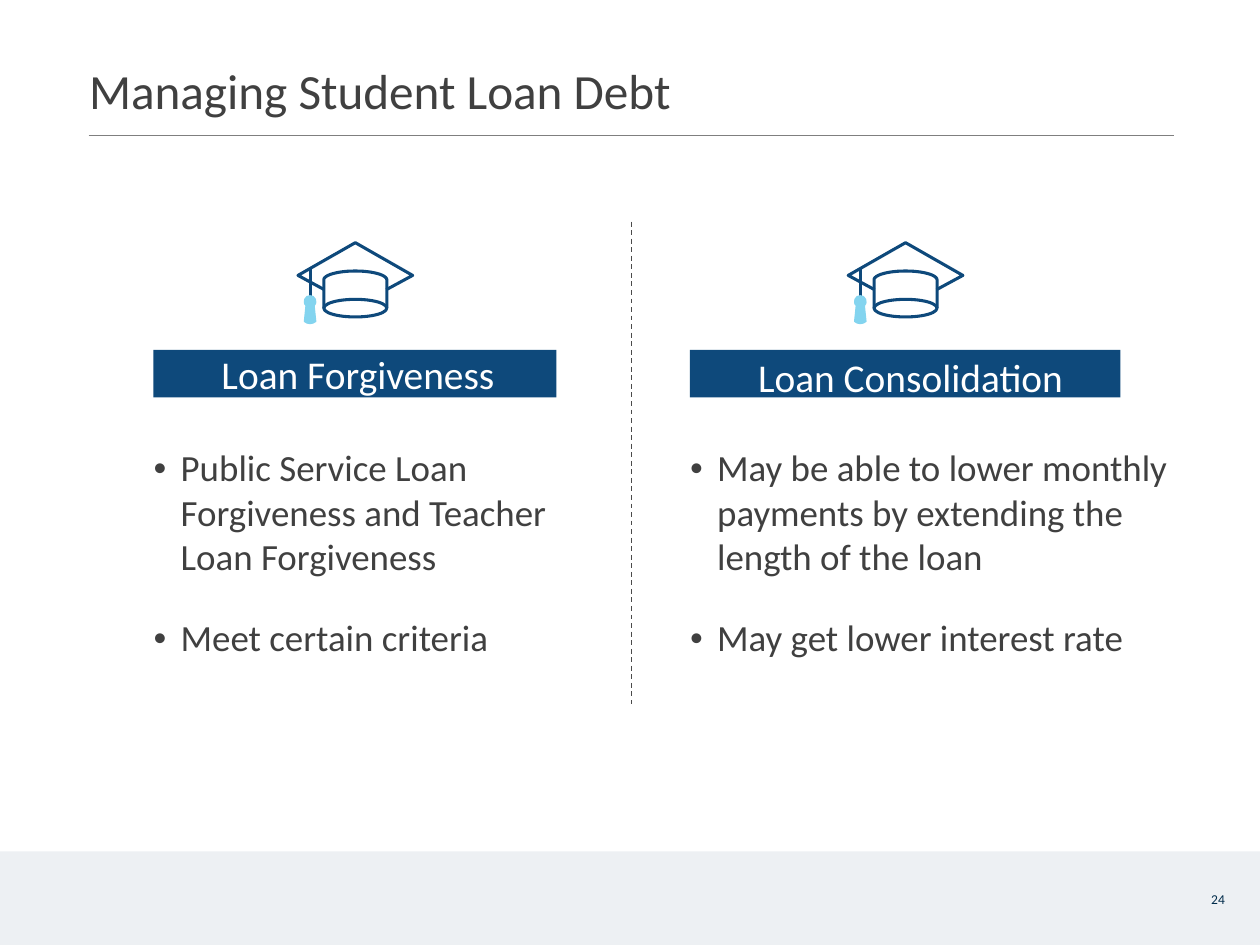
from math import cos, pi, sin

from lxml.etree import SubElement
from pptx import Presentation
from pptx.dml.color import RGBColor
from pptx.enum.dml import MSO_LINE_DASH_STYLE as Dash
from pptx.enum.shapes import MSO_CONNECTOR as Link, MSO_SHAPE as Form
from pptx.enum.text import MSO_ANCHOR as Anchor, MSO_AUTO_SIZE as Fit, PP_ALIGN as Align
from pptx.oxml.ns import qn
from pptx.util import Inches, Pt

HUES = {
    "text": "404040", "navy": "0E497B", "sky": "83D4EF", "band": "EDF0F3",
    "rule": "7F7F7F", "dash": "4A4A4A", "page": "002B49", "white": "FFFFFF",
}
HUES = {name: RGBColor.from_string(code) for name, code in HUES.items()}

deck = Presentation()
deck.slide_width, deck.slide_height = Inches(14.22), Inches(10.67)
slide = deck.slides.add_slide(deck.slide_layouts[5])
shapes = slide.shapes


def grid(*cells):
    """Turn cells of a grid 100 columns wide and 75 rows high into lengths."""
    return [int(cell * deck.slide_width / 100) for cell in cells]


def paint(shape, fill=None, line=None, width=1):
    """Set fill and line by colour name, and drop the theme's shadow."""
    if hasattr(shape, "fill"):
        shape.shadow.inherit = False
        if fill:
            shape.fill.solid()
            shape.fill.fore_color.rgb = HUES[fill]
        else:
            shape.fill.background()
    else:
        SubElement(shape._element.spPr, qn("a:effectLst"))
    if line:
        shape.line.color.rgb = HUES[line]
        shape.line.width = Pt(width)
    else:
        shape.line.fill.background()


# Footer band, title and rules
band = shapes.add_shape(Form.RECTANGLE, *grid(0, 67.6, 100, 7.43))
paint(band, "band")

title = shapes.title
title.left, title.top, title.width, title.height = grid(7, 4.64, 63.3, 4.85)
title.text_frame.text = "Managing Student Loan Debt"

rule = shapes.add_connector(Link.STRAIGHT, *grid(7.03, 10.76, 93.18, 10.76))
paint(rule, line="rule")
split = shapes.add_connector(Link.STRAIGHT, *grid(50.14, 17.6, 50.14, 55.9))
paint(split, line="dash")
split.line.dash_style = Dash.DASH

page = shapes.add_textbox(*grid(95.92, 70.46, 1.4, 1.4))
page.text_frame.text = "24"

# box, size, colour, left and top margins in cells
labels = [(title, 40, "text", 0.07, 0.17), (page, 11, "page", 0.21, 0.28)]

# Two topics: left edge, bar width, list width, cap centre, heading, spacing, points
topics = [
    (12.17, 32, 32.07, 28.2, "Loan Forgiveness", 0.9, [
        "Public Service Loan Forgiveness and Teacher Loan Forgiveness",
        "Meet certain criteria"]),
    (54.75, 34.18, 38.54, 71.87, "Loan Consolidation", 1.0, [
        "May be able to lower monthly payments by extending the length of the loan",
        "May get lower interest rate"]),
]

# Cap outlines, measured from the centre line of the cap
brim = [(2.46, 23), (4.55, 21.87), (0, 19.27), (-4.55, 21.87), (-2.46, 23)]
arc = [(2.5 * cos(pi * i / 24), 22.22 - 0.7 * sin(pi * i / 24)) for i in range(25)]
crown = [(2.5, 24.47)] + arc + [(-2.5, 24.47)]
side = [(0.25, 23.55), (0.42, 23.77), (0.45, 24), (0.42, 24.14),
        (0.32, 24.26), (0.45, 25.53), (0.25, 25.65)]
cord = -3.59
tassel = [(cord, 23.49)] + [(cord + x, y) for x, y in side]
tassel += [(cord, 25.7)] + [(cord - x, y) for x, y in reversed(side)]
outlines = [(brim, False, None, "navy", 2.5), (tassel, True, "sky", "sky", 1),
            (crown, False, None, "navy", 2.5)]

for left, wide, span, mid, head, gap, points in topics:
    string = shapes.add_connector(
        Link.STRAIGHT, *grid(mid + cord, 21.3, mid + cord, 23.63))
    paint(string, line="navy", width=2.5)
    for dots, closed, fill, line, width in outlines:
        path_dots = [grid(mid + x, y) for x, y in dots]
        pen = shapes.build_freeform(*path_dots[0])
        pen.add_line_segments(path_dots[1:], close=closed)
        paint(pen.convert_to_shape(), fill, line, width)
    rim = shapes.add_shape(Form.OVAL, *grid(mid - 2.5, 23.77, 5, 1.4))
    paint(rim, line="navy", width=2.5)

    bar = shapes.add_shape(Form.RECTANGLE, *grid(left, 27.78, wide, 3.78))
    paint(bar, "navy")
    bar.text_frame.text = head
    bar.text_frame.paragraphs[0].line_spacing = gap
    labels.append((bar, 32, "white", 5.41, 0.44))

    body = shapes.add_textbox(*grid(left - 0.08, 35.16, span, 17.23))
    body.text_frame.text = "\n".join(points)
    for para in body.text_frame.paragraphs:
        props = para._p.get_or_add_pPr()
        inset, hang = grid(2.25, -2.18)
        props.set("marL", str(inset))
        props.set("indent", str(hang))
        SubElement(props, qn("a:buSzPct")).set("val", "75000")
        SubElement(props, qn("a:buFont")).set("typeface", "Calibri")
        SubElement(props, qn("a:buChar")).set("char", "•")
    para.space_before = Pt(30)
    labels.append((body, 30, "text", 0, 0.17))

for box, size, hue, inset, drop in labels:
    frame = box.text_frame
    frame.word_wrap = box is not page
    frame.auto_size = Fit.NONE
    frame.vertical_anchor = Anchor.MIDDLE if hue == "white" else Anchor.TOP
    frame.margin_left, frame.margin_top = grid(inset, drop)
    frame.margin_right = frame.margin_bottom = 0
    for para in frame.paragraphs:
        para.alignment = Align.LEFT
        para.font.name = "Calibri"
        para.font.size = Pt(size)
        para.font.color.rgb = HUES[hue]

deck.save("out.pptx")
